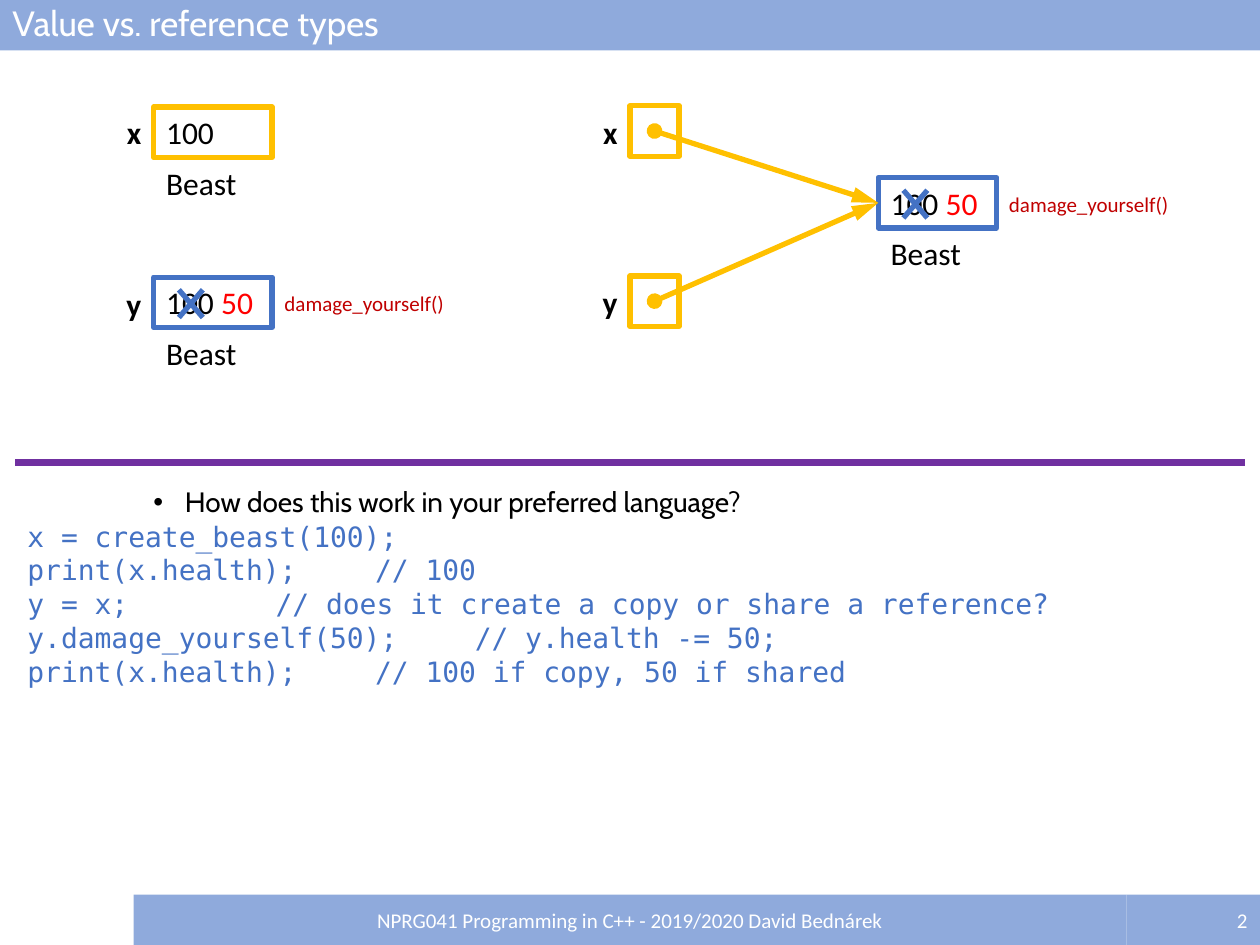
from lxml.etree import SubElement
from pptx import Presentation
from pptx.dml.color import RGBColor
from pptx.enum.shapes import MSO_CONNECTOR as Connector, MSO_SHAPE as Shape
from pptx.enum.text import MSO_ANCHOR as Anchor, PP_ALIGN as Align
from pptx.oxml.ns import qn
from pptx.util import Inches, Pt

# The slide is a grid of 100 columns by 75 rows of square cells
COLUMNS, ROWS, CELL = 100, 75, Inches(0.1)
BAR, GOLD, BLUE, PURPLE = "8FAADC", "FFC000", "4472C4", "7030A0"
BLACK, WHITE, RED, DARK_RED = "000000", "FFFFFF", "FF0000", "C00000"
BOX_WIDTH, BOX_HEIGHT, POINTER_SIZE = 9.4, 4, 3.9

BODY = {"size": Pt(18), "name": "Calibri", "color": BLACK}
NAME = {**BODY, "bold": True}
NOTE = {**BODY, "size": Pt(12), "color": DARK_RED}
FOOTER = {**NOTE, "color": WHITE}
TITLE = {"size": Pt(20), "name": "Cabin", "color": WHITE}
QUESTION = {"size": Pt(16), "name": "Cabin", "color": BLACK}
CODE = {"size": Pt(16), "name": "DejaVu Sans Mono", "color": BLUE}

# Code lines, each with the column where its comment starts
CODE_LINES = [
    ("x = create_beast(100);", None),
    ("print(x.health);\t\t// 100", 27.6),
    ("y = x;\t\t\t// does it create a copy or share a reference?", 19.7),
    ("y.damage_yourself(50);\t\t// y.health -= 50;", 35.5),
    ("print(x.health);\t\t// 100 if copy, 50 if shared", 27.6),
]


def cells(*counts):
    return [round(count * CELL) for count in counts]


def rgb(value):
    return RGBColor.from_string(value)


def add_run(paragraph, text, style):
    run = paragraph.add_run()
    run.text = text
    for key, value in style.items():
        if key == "color":
            run.font.color.rgb = rgb(value)
        else:
            setattr(run.font, key, value)


def write(shape, runs, **paragraph_format):
    shape.text_frame.word_wrap = True
    paragraph = shape.text_frame.paragraphs[0]
    for key, value in {"alignment": Align.LEFT, **paragraph_format}.items():
        setattr(paragraph, key, value)
    for text, style in runs:
        add_run(paragraph, text, style)


def add_label(slide, box, text, style, **paragraph_format):
    label = slide.shapes.add_textbox(*cells(*box))
    write(label, [(text, style)], **paragraph_format)


def add_box(slide, box, fill=None, line=None):
    shape = slide.shapes.add_shape(Shape.RECTANGLE, *cells(*box))
    shape.shadow.inherit = False
    if fill:
        shape.fill.solid()
        shape.fill.fore_color.rgb = rgb(fill)
    else:
        shape.fill.background()
    if line:
        shape.line.color.rgb = rgb(line)
        shape.line.width = Pt(3)
    else:
        shape.line.fill.background()
    return shape


def add_line(slide, start, end, color, width=3, arrow=False):
    line = slide.shapes.add_connector(Connector.STRAIGHT, *cells(*start, *end))
    line.line.color.rgb = rgb(color)
    line.line.width = Pt(width)
    if arrow:
        outline = line.line._get_or_add_ln()
        SubElement(outline, qn("a:headEnd"), type="oval")
        SubElement(outline, qn("a:tailEnd"), type="triangle", w="med", len="lg")
    SubElement(line._element.spPr, qn("a:effectLst"))


def add_bar(slide, box, text, style, **paragraph_format):
    bar = add_box(slide, box, fill=BAR)
    bar.text_frame.vertical_anchor = Anchor.MIDDLE
    write(bar, [(text, style)], **paragraph_format)


def add_name(slide, right, top, text):
    add_label(slide, (right - 4.7, top, 4.7, BOX_HEIGHT), text, NAME, alignment=Align.RIGHT)


def add_beast(slide, left, top, damaged):
    """A beast's health; a damaged one has its old value crossed out."""
    box = add_box(slide, (left, top, BOX_WIDTH, BOX_HEIGHT), line=BLUE if damaged else GOLD)
    write(box, [("100", BODY)] + [(" 50", {**BODY, "color": RED})] * damaged)
    add_label(slide, (left, top + BOX_HEIGHT, 7.9, BOX_HEIGHT), "Beast", BODY)
    if damaged:
        add_label(slide, (left + BOX_WIDTH, top + 0.6, 21.3, 3), "damage_yourself()", NOTE)
        near, far, upper, lower = left + 2, left + 3.9, top + 1, top + 3.2
        add_line(slide, (far, upper), (near, lower), BLUE)
        add_line(slide, (near, upper), (far, lower), BLUE)


def add_value_diagram(slide, left, top):
    for name, offset, damaged in (("x", 0, False), ("y", 13.5, True)):
        add_name(slide, left, top + offset + 0.15 * damaged, name)
        add_beast(slide, left, top + offset, damaged)


def add_reference_diagram(slide, left, top):
    beast_left, beast_top = left + 19.7, top + 5.7
    add_beast(slide, beast_left, beast_top, True)
    for name, offset in (("x", 0), ("y", 13.5)):
        pointer_top = top + offset
        add_name(slide, left, pointer_top + 0.1, name)
        add_box(slide, (left, pointer_top, POINTER_SIZE, BOX_HEIGHT), line=GOLD)
        add_line(slide, (left + POINTER_SIZE / 2, pointer_top + BOX_HEIGHT / 2),
                 (beast_left, beast_top + BOX_HEIGHT / 2), GOLD, arrow=True)


def add_question(slide, box):
    body = slide.shapes.add_textbox(*cells(*box))
    write(body, [("How does this work in your preferred language?", QUESTION)],
          line_spacing=0.9, space_before=Pt(5))
    properties = body.text_frame.paragraphs[0]._p.get_or_add_pPr()
    properties.set("marL", str(Inches(1.25)))
    properties.set("indent", str(-Inches(0.25)))
    SubElement(properties, qn("a:buFont"), typeface="Arial")
    SubElement(properties, qn("a:buChar"), char="•")
    # Code, with the last tab of a line leading to its comment
    for text, comment_column in CODE_LINES:
        paragraph = body.text_frame.add_paragraph()
        paragraph.line_spacing = Pt(19.3)
        add_run(paragraph, text, CODE)
        if comment_column:
            tabs = SubElement(paragraph._p.get_or_add_pPr(), qn("a:tabLst"))
            for step in reversed(range(text.count("\t"))):
                position, = cells(comment_column - 3 * step)
                SubElement(tabs, qn("a:tab"), pos=str(position), algn="l")


def add_footer(slide, left, top, height):
    number_left = 89.4
    add_bar(slide, (left, top, number_left - left, height),
            "NPRG041 Programming in C++ - 2019/2020 David Bednárek", FOOTER,
            alignment=Align.CENTER)
    add_bar(slide, (number_left, top, COLUMNS - number_left, height), "2", FOOTER,
            alignment=Align.RIGHT)


def main():
    presentation = Presentation()
    presentation.slide_width, presentation.slide_height = cells(COLUMNS, ROWS)
    slide = presentation.slides.add_slide(presentation.slide_layouts[6])
    margin, divider = 1.2, 36.7
    add_line(slide, (margin, divider), (COLUMNS - margin, divider), PURPLE, width=4)
    add_question(slide, (margin, 38.3, COLUMNS - 2 * margin, 32.3))
    add_bar(slide, (0, 0, COLUMNS, 4), "Value vs. reference types", TITLE, line_spacing=0.9)
    add_footer(slide, 10.6, ROWS - 4, 4)
    add_value_diagram(slide, 12.2, 8.5)
    add_reference_diagram(slide, 50, 8.4)
    presentation.save("out.pptx")


if __name__ == "__main__":
    main()
